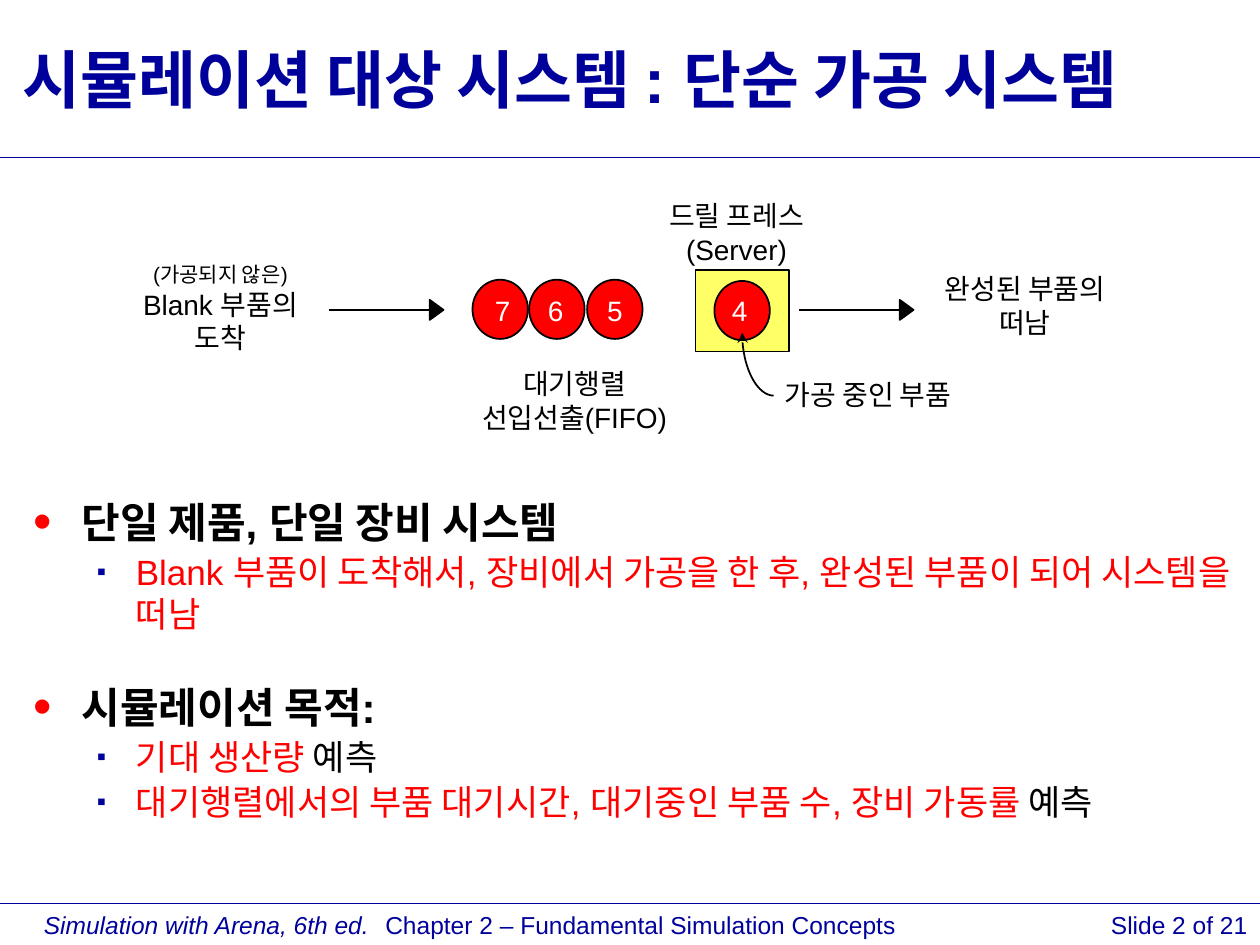
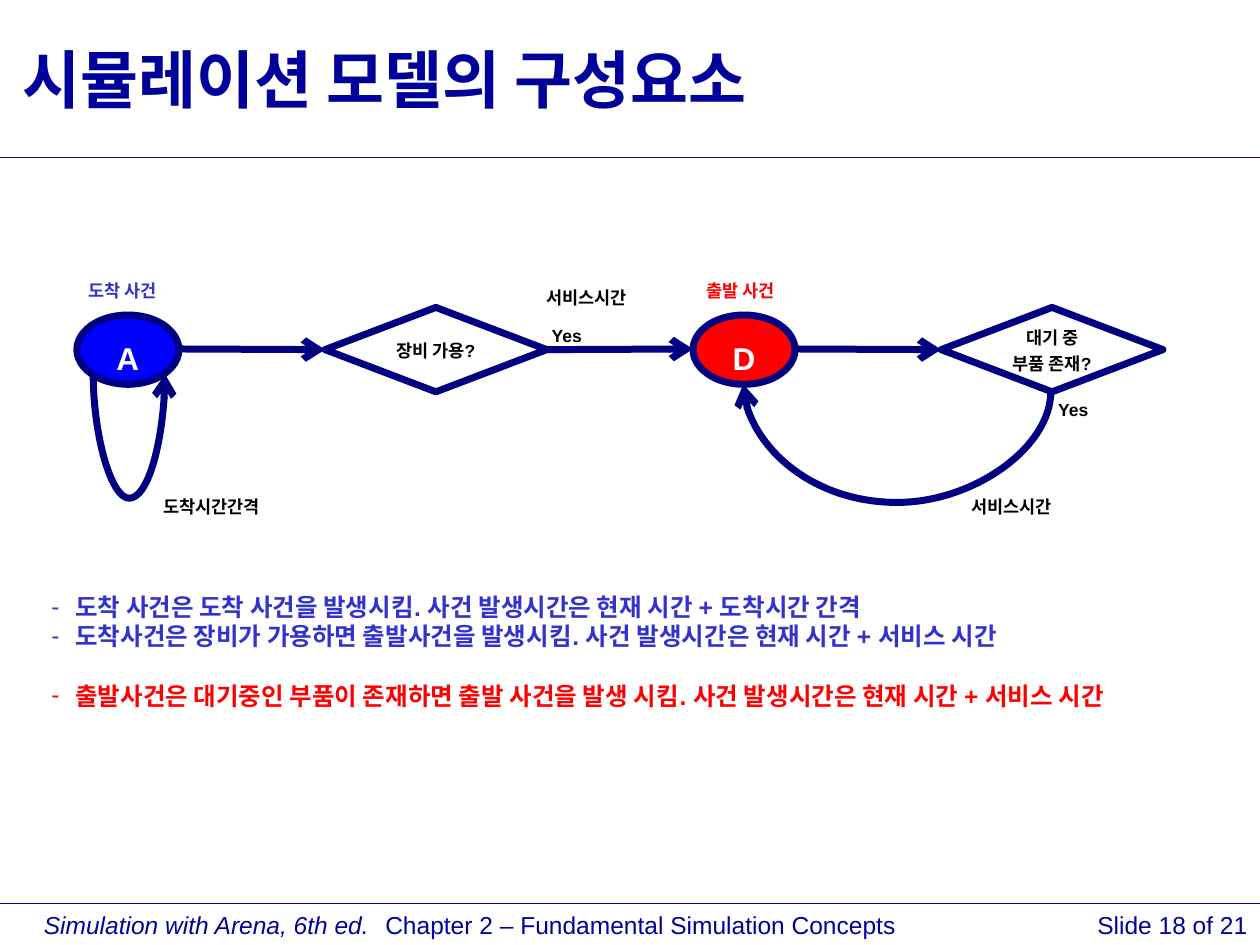
from dataclasses import dataclass
from typing import NamedTuple, Optional

from lxml.etree import SubElement
from pptx import Presentation
from pptx.dml.color import RGBColor
from pptx.enum.shapes import MSO_CONNECTOR as Link, MSO_SHAPE as Kind
from pptx.enum.text import MSO_ANCHOR as Anchor, MSO_AUTO_SIZE as Auto, PP_ALIGN as Align
from pptx.oxml.ns import qn
from pptx.util import Emu, Pt

PX = 9144
FONT = "Arial"
HUES = {
    "navy": "00009B",
    "edge": "000080",
    "blue": "0000FF",
    "iris": "3333CC",
    "red": "FF0000",
    "sun": "FFFF66",
    "black": "000000",
    "white": "FFFFFF",
}


class Box(NamedTuple):
    x: int
    y: int
    w: int
    h: int


class Run(NamedTuple):
    text: str
    size: int
    hue: str = "black"
    bold: bool = False
    slant: bool = False


class Mark(NamedTuple):
    char: str
    left: int
    hang: int
    level: int = 0
    hue: Optional[str] = None
    scale: int = 100


@dataclass
class Para:
    runs: list[Run]
    align: Align = Align.LEFT
    mark: Optional[Mark] = None
    before: int = 0
    after: int = 0
    lead: Optional[float] = None


class Curve(NamedTuple):
    box: Box
    turn: int
    bend: float


DOT = Mark("•", 38, 38, 0, "red", 125)
CUBE = Mark("▪", 81, 31, 1, "navy", 75)
DASH = Mark("-", 19, 19)


def emu(px: float) -> Emu:
    return Emu(round(px * PX))


def place(box: Box) -> list[Emu]:
    return [emu(n) for n in box]


def rgb(hue: str) -> RGBColor:
    return RGBColor.from_string(HUES[hue])


def add_mark(para, mark: Mark) -> None:
    para.level = mark.level
    props = para._p.get_or_add_pPr()
    props.set("marL", str(emu(mark.left)))
    props.set("indent", str(emu(-mark.hang)))
    if mark.hue:
        tint = SubElement(props, qn("a:buClr"))
        SubElement(tint, qn("a:srgbClr")).set("val", HUES[mark.hue])
        SubElement(props, qn("a:buSzPct")).set("val", str(mark.scale * 1000))
    SubElement(props, qn("a:buFont")).set("typeface", FONT)
    SubElement(props, qn("a:buChar")).set("char", mark.char)


def write(frame, paras: list[Para]) -> None:
    for i, item in enumerate(paras):
        para = frame.add_paragraph() if i else frame.paragraphs[0]
        if item.mark:
            add_mark(para, item.mark)
        para.alignment = item.align
        para.space_before, para.space_after = Pt(item.before), Pt(item.after)
        if item.lead:
            para.line_spacing = item.lead
        for part in item.runs:
            run = para.add_run()
            run.text = part.text
            font = run.font
            font.name, font.size = FONT, Pt(part.size)
            font.bold, font.italic = part.bold, part.slant
            font.color.rgb = rgb(part.hue)


def add_text(slide, box: Box, paras: list[Para], wrap: bool = False,
             anchor: Anchor = Anchor.TOP) -> None:
    frame = slide.shapes.add_textbox(*place(box)).text_frame
    frame.word_wrap = wrap
    frame.auto_size = Auto.NONE if wrap else Auto.SHAPE_TO_FIT_TEXT
    frame.vertical_anchor = anchor
    write(frame, paras)


def add_note(slide, box: Box, lines: list[Run], align: Align = Align.CENTER) -> None:
    add_text(slide, box, [Para([line], align) for line in lines])


def paint(shape, fill: str, edge: str, width: int) -> None:
    shape.shadow.inherit = False
    shape.fill.solid()
    shape.fill.fore_color.rgb = rgb(fill)
    shape.line.color.rgb = rgb(edge)
    shape.line.width = Pt(width)


def add_form(slide, kind: Kind, box: Box, fill: str, edge: str = "black", width: int = 1):
    shape = slide.shapes.add_shape(kind, *place(box))
    paint(shape, fill, edge, width)
    return shape


def add_tip(shape, tip: str) -> None:
    shape.line._get_or_add_ln().append(
        shape.element.makeelement(qn("a:tailEnd"), {"type": tip}))


def add_line(slide, start: tuple[int, int], end: tuple[int, int], hue: str = "black",
             width: int = 1, tip: str = "", kind: Link = Link.STRAIGHT):
    line = slide.shapes.add_connector(kind, *map(emu, start + end))
    line.line.color.rgb = rgb(hue)
    line.line.width = Pt(width)
    if tip:
        add_tip(line, tip)
    SubElement(line.element.spPr, qn("a:effectLst"))
    return line


def add_curve(slide, curve: Curve) -> None:
    x, y, w, h = curve.box
    line = add_line(slide, (x + w, y), (x, y + h), "edge", 4, "arrow", Link.CURVE)
    props = line.element.spPr
    props.find(qn("a:xfrm")).set("rot", str(curve.turn * 60000))
    geom = props.find(qn("a:prstGeom"))
    geom.set("prst", "curvedConnector3")
    lst = geom.find(qn("a:avLst"))
    if lst is None:
        lst = SubElement(geom, qn("a:avLst"))
    guide = SubElement(lst, qn("a:gd"))
    guide.set("name", "adj1")
    guide.set("fmla", f"val {round(curve.bend * 100000)}")


def add_path(slide, dots: list[tuple[float, float]], close: bool):
    first, *rest = [(emu(x), emu(y)) for x, y in dots]
    pen = slide.shapes.build_freeform(*first)
    pen.add_line_segments(rest, close=close)
    shape = pen.convert_to_shape()
    paint(shape, "black", "black", 1)
    return shape


def add_flow(slide, x: int) -> None:
    add_line(slide, (x, 246), (x + 83, 246))
    add_path(slide, [(x + 80, 238), (x + 80, 254), (x + 91, 246)], True)


def add_part(slide, x: int, y: int, label: str, left: int) -> None:
    add_form(slide, Kind.OVAL, Box(x, y, 44, 47), "red")
    add_text(slide, Box(left, 228, 35, 37), [Para([Run(label, 16, "white")])], True)


def add_hook(slide) -> None:
    ends = [(614, 314), (601, 314), (589, 292), (589, 264)]
    steps = 24
    dots = []
    for i in range(steps + 1):
        t = i / steps
        mix = ((1 - t) ** 3, 3 * t * (1 - t) ** 2, 3 * t * t * (1 - t), t ** 3)
        dots.append(tuple(sum(m * p[k] for m, p in zip(mix, ends)) for k in (0, 1)))
    hook = add_path(slide, dots, False)
    hook.fill.background()
    add_tip(hook, "stealth")


def add_page(deck, title: str, number: int):
    slide = deck.slides.add_slide(deck.slide_layouts[6])
    for y in (125, 717):
        add_line(slide, (0, y), (1000, y), "navy")
    add_text(slide, Box(8, 8, 983, 108), [Para([Run(title, 36, "navy", True)])],
             True, Anchor.MIDDLE)
    feet = [
        (25, 300, "Simulation with Arena, 6th ed.", Align.LEFT, True),
        (292, 433, "Chapter 2 – Fundamental Simulation Concepts", Align.CENTER, False),
        (833, 167, f"Slide {number} of 21", Align.RIGHT, False),
    ]
    for x, w, text, align, slant in feet:
        run = Run(text, 14, "navy", slant=slant)
        add_text(slide, Box(x, 717, w, 33), [Para([run], align)], True)
    return slide


def add_system(deck) -> None:
    slide = add_page(deck, "시뮬레이션 대상 시스템 : 단순 가공 시스템", 2)
    add_form(slide, Kind.RECTANGLE, Box(552, 214, 74, 65), "sun")
    add_part(slide, 567, 223, "4", 571)
    for x, label, left in [(466, "5", 472), (420, "6", 425), (375, "7", 383)]:
        add_part(slide, x, 222, label, left)
    for x in (261, 634):
        add_flow(slide, x)
    notes = [
        (Box(100, 203, 150, 84),
         [Run("(가공되지 않은)", 12), Run("Blank 부품의", 16), Run("도착", 16)]),
        (Box(733, 211, 161, 64), [Run("완성된 부품의", 16), Run("떠남", 16)]),
        (Box(515, 153, 139, 64), [Run("드릴 프레스", 16), Run("(Server)", 16)]),
        (Box(368, 286, 176, 64), [Run("대기행렬", 16), Run("선입선출(FIFO)", 16)]),
    ]
    for box, lines in notes:
        add_note(slide, box, lines)
    add_note(slide, Box(613, 295, 168, 37), [Run("가공 중인 부품", 16)], Align.LEFT)
    add_hook(slide)

    def head(text: str, before: int) -> Para:
        return Para([Run(text, 24, bold=True)], mark=DOT, before=before, after=1)

    def item(red: str, rest: str = "") -> Para:
        runs = [Run(red, 20, "red")] + ([Run(rest, 20)] if rest else [])
        return Para(runs, mark=CUBE, before=1, after=1)

    add_text(slide, Box(17, 389, 983, 319), [
        head("단일 제품, 단일 장비 시스템", 0),
        item("Blank 부품이 도착해서, 장비에서 가공을 한 후, 완성된 부품이 되어 시스템을 떠남"),
        head("시뮬레이션 목적:", 26),
        item("기대 생산량", " 예측"),
        item("대기행렬에서의 부품 대기시간, 대기중인 부품 수, 장비 가동률 ", "예측"),
    ], True)


def add_node(slide, kind: Kind, box: Box, fill: str, lines: list[Run], anchor: Anchor):
    node = add_form(slide, kind, box, fill, "edge", 4)
    frame = node.text_frame
    frame.word_wrap = True
    frame.vertical_anchor = anchor
    frame.margin_left = frame.margin_right = 0
    if anchor == Anchor.TOP:
        frame.margin_top = emu(8)
    write(frame, [Para([run], Align.CENTER, before=2 if i else 0, lead=1.1)
                  for i, run in enumerate(lines)])
    return node


def add_model(deck) -> None:
    slide = add_page(deck, "시뮬레이션 모델의 구성요소", 18)
    for x, fill, label in [(61, "blue", "A"), (550, "red", "D")]:
        add_node(slide, Kind.OVAL, Box(x, 250, 81, 55), fill,
                 [Run(label, 18, "white", True)], Anchor.TOP)
    free, queue = [
        add_node(slide, Kind.FLOWCHART_DECISION, Box(x, 244, 176, 67), "white",
                 [Run(text, 10, bold=True) for text in lines], Anchor.MIDDLE)
        for x, lines in [(258, ["장비 가용?"]), (747, ["대기 중", "부품 존재?"])]
    ]
    for x, end, source, target in [(143, 258, None, free), (434, 550, free, None),
                                   (631, 747, None, queue)]:
        line = add_line(slide, (x, 277), (end, 277), "edge", 4, "arrow")
        if source:
            line.begin_connect(source, 3)
        if target:
            line.end_connect(target, 1)
    for curve in [Curve(Box(102, 268, 1, 57), 270, 101),
                  Curve(Box(709, 186, 6, 244), 90, -14.67)]:
        add_curve(slide, curve)
    labels = [
        (428, 253, 45, "Yes", "black"),
        (830, 312, 45, "Yes", "black"),
        (120, 389, 107, "도착시간간격", "black"),
        (424, 223, 89, "서비스시간", "black"),
        (761, 389, 90, "서비스시간", "black"),
        (60, 217, 79, "도착 사건", "iris"),
        (551, 217, 79, "출발 사건", "red"),
    ]
    for x, y, w, text, hue in labels:
        add_note(slide, Box(x, y, w, 27), [Run(text, 10, hue, True)], Align.LEFT)
    rules = [
        ("도착 사건은 도착 사건을 발생시킴. 사건 발생시간은 현재 시간 + 도착시간 간격", "iris", 0),
        ("도착사건은 장비가 가용하면 출발사건을 발생시킴. 사건 발생시간은 현재 시간 + 서비스 시간", "iris", 0),
        ("출발사건은 대기중인 부품이 존재하면 출발 사건을 발생 시킴. 사건 발생시간은 현재 시간 + 서비스 시간", "red", 17),
    ]
    add_text(slide, Box(31, 465, 937, 104),
             [Para([Run(text, 14, hue, True)], mark=DASH, before=gap)
              for text, hue, gap in rules])


def main() -> None:
    deck = Presentation()
    deck.slide_width, deck.slide_height = emu(1000), emu(750)
    add_system(deck)
    add_model(deck)
    deck.save("out.pptx")


if __name__ == "__main__":
    main()
